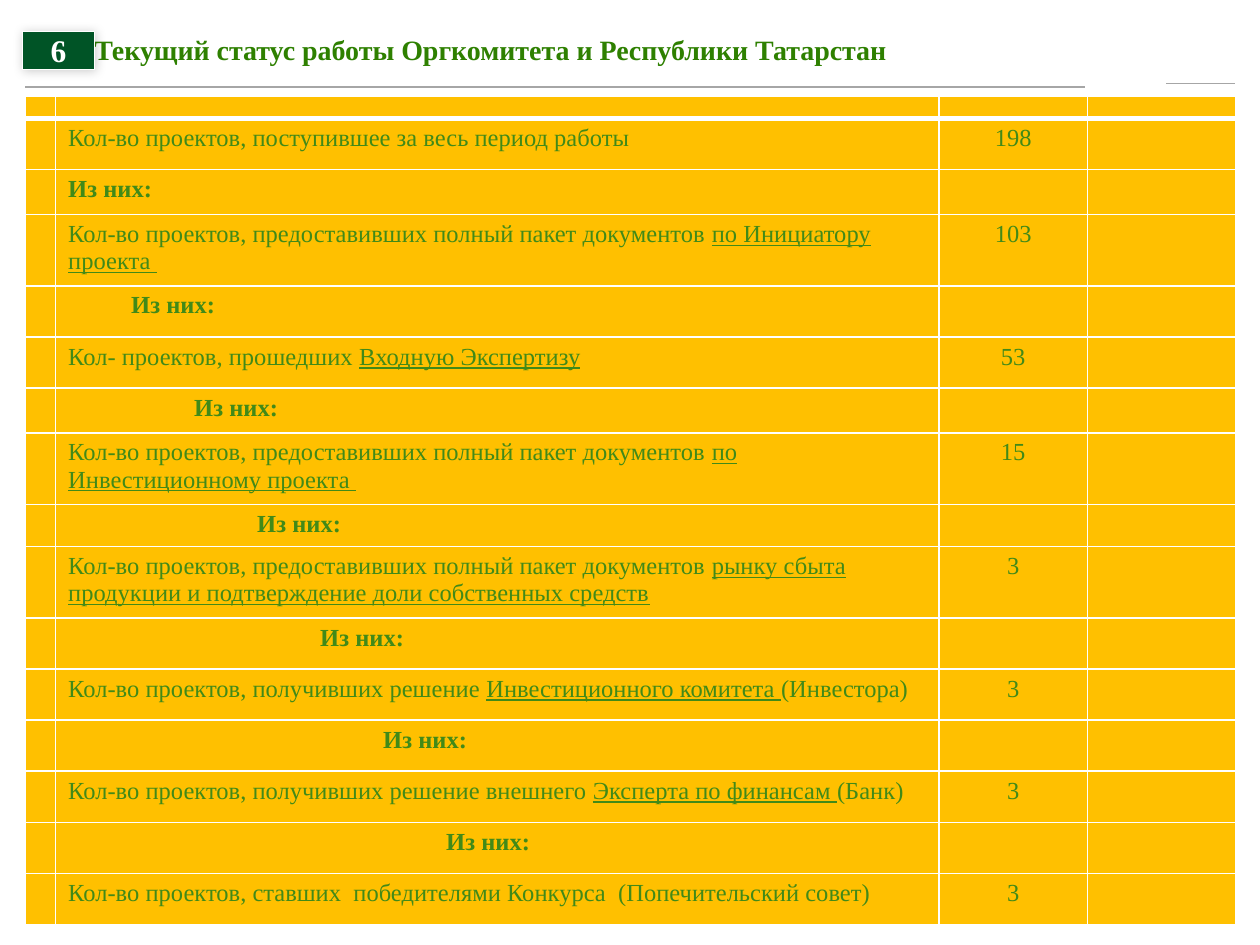
from pptx import Presentation
from pptx.dml.color import RGBColor
from pptx.enum.shapes import MSO_CONNECTOR, MSO_SHAPE
from pptx.enum.text import MSO_ANCHOR, PP_ALIGN
from pptx.oxml import parse_xml
from pptx.oxml.ns import nsdecls
from pptx.util import Pt

LINE = MSO_CONNECTOR.STRAIGHT
RECT = MSO_SHAPE.RECTANGLE
MIDDLE = MSO_ANCHOR.MIDDLE
LEFT, CENTER, JUST = PP_ALIGN.LEFT, PP_ALIGN.CENTER, PP_ALIGN.JUSTIFY

FONT = "Times New Roman"
WHITE, GOLD, GREEN = "FFFFFF", "FFC000", "418A18"
STEP = 36  # indent per level

PACK = "Кол-во проектов, предоставивших полный пакет документов "
DONE = "Кол-во проектов, получивших решение "
# Height, label parts (every second one underlined), count
COUNTS = [
    (29.2, ["Кол-во проектов, поступившее за весь период работы"], 198),
    (40.9, [PACK, "по Инициатору проекта "], 103),
    (29.2, ["Кол- проектов, прошедших ", "Входную Экспертизу"], 53),
    (40.9, [PACK, "по Инвестиционному проекта "], 15),
    (40.9, [PACK, "рынку сбыта продукции и подтверждение доли "
            "собственных средств"], 3),
    (29.2, [DONE, "Инвестиционного комитета ", "(Инвестора)"], 3),
    (29.2, [DONE + "внешнего ", "Эксперта по финансам ", "(Банк)"], 3),
    (29.2, ["Кол-во проектов, ставших  победителями Конкурса  "
            "(Попечительский совет)"], 3),
]
# Heights of the "Из них:" rows between the counts
GAPS = [25.7, 29.2, 25.6, 24, 29.2, 29.2, 29.2]
COLS = [17.4, 504.7, 85, 84.7]


def color(code):
    return RGBColor.from_string(code)


def add_run(para, text, code, **form):
    run = para.add_run()
    run.text = text
    run.font.color.rgb = color(code)
    for key, value in {"name": FONT, **form}.items():
        setattr(run.font, key, value)


def set_frame(frame, wrap=True):
    form = {"margin_left": 0, "margin_right": 0, "margin_top": 0,
            "margin_bottom": 0, "vertical_anchor": MIDDLE, "word_wrap": wrap}
    for key, value in form.items():
        setattr(frame, key, value)
    return frame.paragraphs[0]


def add_rule(slide, x1, x2, y):
    rule = slide.shapes.add_connector(LINE, Pt(x1), Pt(y), Pt(x2), Pt(y))
    rule.line.color.rgb = color("A6A6A6")
    rule.line.width = Pt(1)
    rule._element.spPr.append(parse_xml(f"<a:effectLst {nsdecls('a')}/>"))


def add_title(slide, text):
    box = slide.shapes.add_textbox(Pt(54), Pt(8), Pt(557.3), Pt(40.3))
    add_run(set_frame(box.text_frame), text, "2E8000", size=Pt(16), bold=True)


def add_badge(slide, text):
    badge = slide.shapes.add_shape(RECT, Pt(13), Pt(18), Pt(41), Pt(21.6))
    badge.fill.solid()
    badge.fill.fore_color.rgb = color("005426")
    badge.line.color.rgb = color(WHITE)
    badge.line.width = Pt(0.75)
    # Soft shadow: blur 6 pt, distance 1 pt, 45 degrees, 20 % black
    badge._element.spPr.append(parse_xml(
        f'<a:effectLst {nsdecls("a")}><a:outerShdw blurRad="{Pt(6)}" '
        f'dist="{Pt(1)}" dir="2700000"><a:srgbClr val="000000">'
        '<a:alpha val="20000"/></a:srgbClr></a:outerShdw></a:effectLst>'))
    para = set_frame(badge.text_frame)
    para.alignment = CENTER
    add_run(para, text, WHITE, size=Pt(18), bold=True)


def style_cell(cell, top, base):
    props = cell._tc.get_or_add_tcPr()
    for side, width in zip("LRTB", (1, 1, top, base)):
        props.append(parse_xml(
            f'<a:ln{side} {nsdecls("a")} w="{Pt(width)}"><a:solidFill>'
            f'<a:srgbClr val="{WHITE}"/></a:solidFill></a:ln{side}>'))
    cell.fill.solid()
    cell.fill.fore_color.rgb = color(GOLD)


def fill_cell(cell, parts, align=LEFT, level=0, bold=False):
    para = cell.text_frame.paragraphs[0]
    if not parts:
        # Small end mark, so that an empty cell does not stretch its row
        cell.margin_top = cell.margin_bottom = 0
        para._p.append(parse_xml(f'<a:endParaRPr {nsdecls("a")} sz="400"/>'))
        return
    para.alignment = align
    if level:
        para.level = level
        para._p.get_or_add_pPr().set("marL", str(Pt(STEP * level)))
    for i, part in enumerate(parts):
        add_run(para, part, GREEN, size=Pt(14), bold=bold,
                underline=i % 2 == 1)


def list_rows():
    """Yield height, label parts, count parts and label format."""
    yield 12.8, [], [], {}
    for i, (height, parts, count) in enumerate(COUNTS):
        yield height, parts, [str(count)], {}
        if i < len(GAPS):
            align = JUST if i > 1 else LEFT
            yield (GAPS[i], ["Из них:"], [],
                   {"align": align, "level": i, "bold": True})


def add_grid(slide):
    rows = list(list_rows())
    frame = slide.shapes.add_table(
        len(rows), len(COLS), Pt(14.4), Pt(54.8), Pt(sum(COLS)),
        Pt(sum(row[0] for row in rows)))
    table = frame.table
    table.first_row = table.horz_banding = False
    for col, width in zip(table.columns, COLS):
        col.width = Pt(width)
    for r, (height, parts, count, form) in enumerate(rows):
        table.rows[r].height = Pt(height)
        for c in range(len(COLS)):
            cell = table.cell(r, c)
            style_cell(cell, 3 if r == 1 else 1, 3 if r == 0 else 1)
            if c == 1:
                fill_cell(cell, parts, **form)
            else:
                fill_cell(cell, count if c == 2 else [], CENTER)


def main():
    deck = Presentation()
    deck.slide_width, deck.slide_height = Pt(720), Pt(540)
    slide = deck.slides.add_slide(deck.slide_layouts[6])
    # Header
    add_rule(slide, 14.4, 620, 49.7)
    add_rule(slide, 666.5, 705.6, 47.7)
    add_title(slide, "Текущий статус работы Оргкомитета и Республики Татарстан")
    add_badge(slide, "6")
    # Project counts
    add_grid(slide)
    deck.save("out.pptx")


if __name__ == "__main__":
    main()
